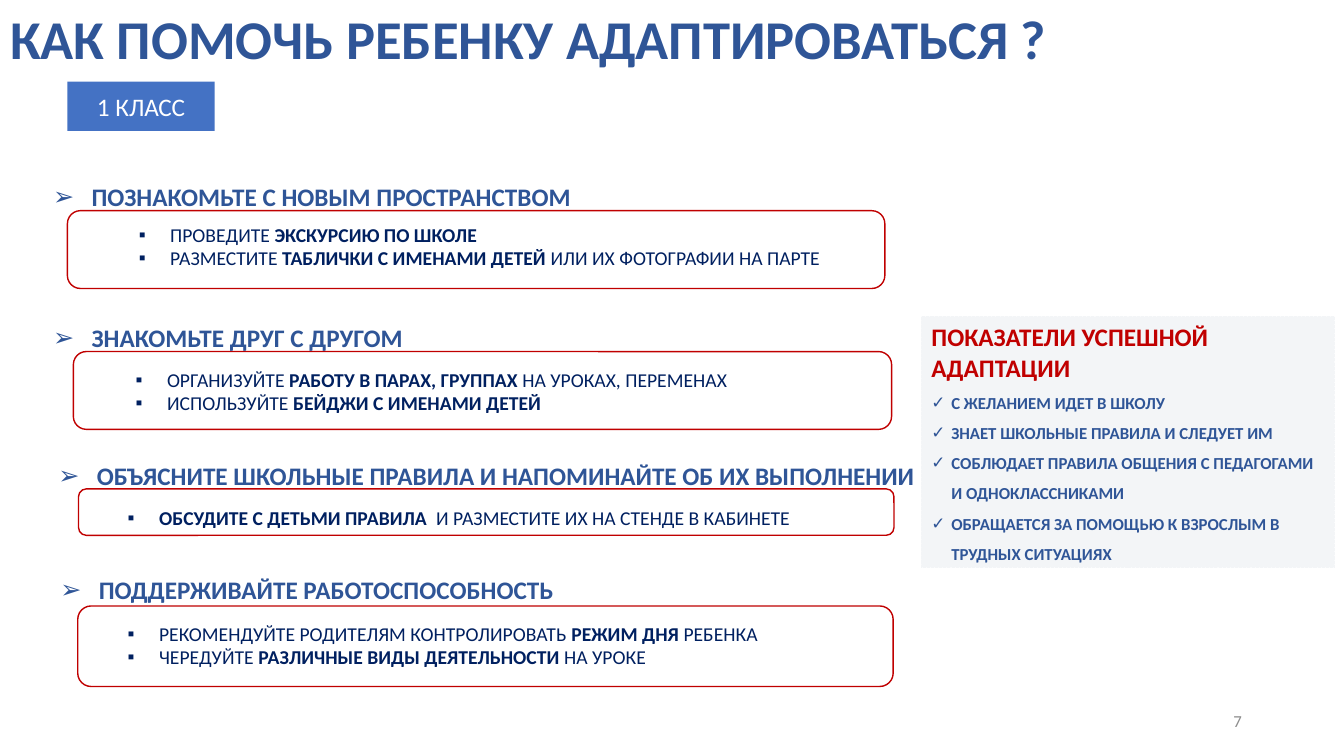
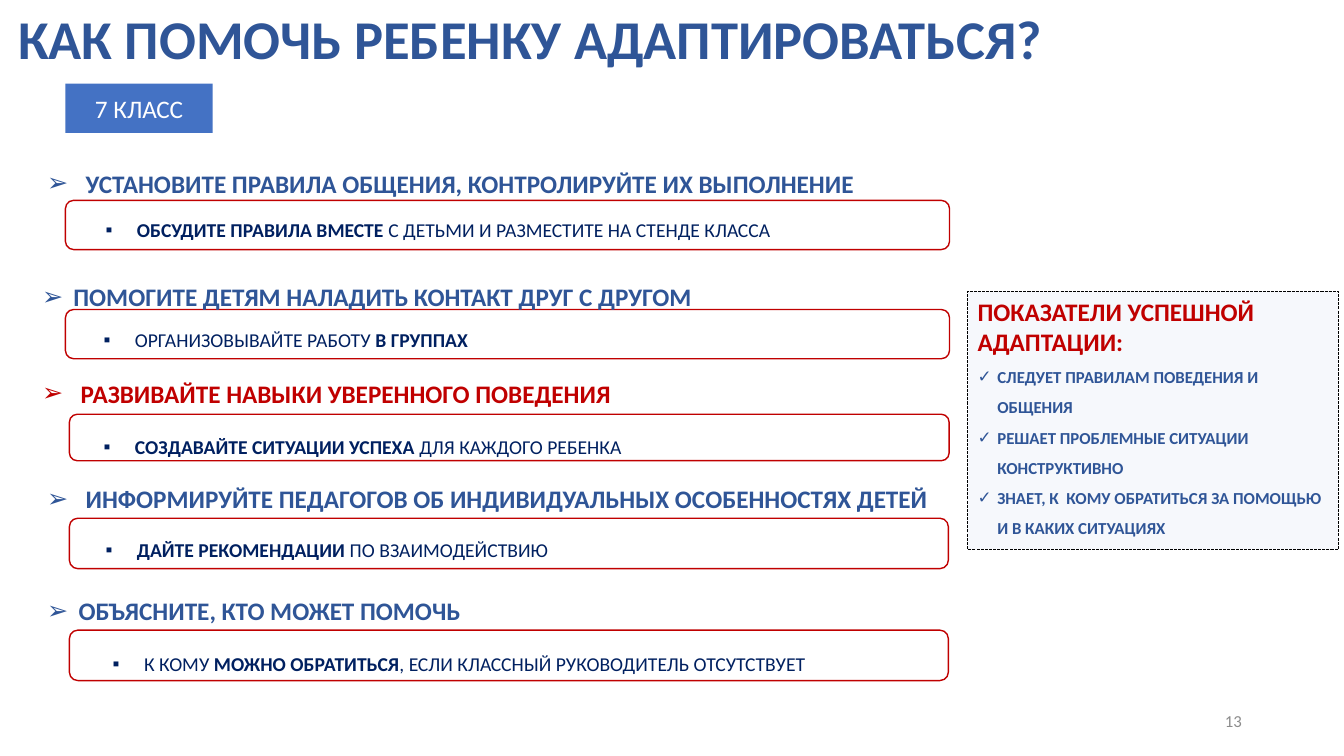
from dataclasses import dataclass

from lxml.etree import SubElement
from pptx import Presentation
from pptx.dml.color import RGBColor
from pptx.enum.dml import MSO_LINE_DASH_STYLE as Dash
from pptx.enum.shapes import MSO_AUTO_SHAPE_TYPE as Shape
from pptx.enum.text import MSO_ANCHOR as Anchor, MSO_AUTO_SIZE as AutoSize, PP_ALIGN as Align
from pptx.oxml.ns import qn
from pptx.util import Cm, Pt

BLUE, NAVY, RED, WHITE = "2F5597", "002060", "C00000", "FFFFFF"
TAG_BLUE, GREY, BLACK = "4472C4", "8C8C8C", "000000"

TEXT = {
    "title": {"size": Pt(39), "bold": True},
    "heading": {"size": Pt(18), "bold": True},
    "advice": {"size": Pt(14), "bold": False},
    "sign": {"size": Pt(12), "bold": True},
    "tag": {"size": Pt(18), "bold": False},
    "number": {"size": Pt(12), "bold": False},
}


def apply(target, values):
    for name, value in values.items():
        setattr(target, name, value)


def paint(color_format, color):
    color_format.rgb = RGBColor.from_string(color)


@dataclass
class Section:
    heading: str
    heading_at: tuple
    box: tuple
    advice_at: tuple
    advice: list
    color: str = BLUE
    hanging: float = 0.97


class Deck:
    """Holds the shared style and the slide being filled."""

    def __init__(self):
        self.presentation = Presentation()
        apply(self.presentation, {"slide_width": Cm(33.87), "slide_height": Cm(19.05)})
        self.slide = None

    def start(self):
        self.slide = self.presentation.slides.add_slide(self.presentation.slide_layouts[1])

    def place(self, part, area):
        apply(part, dict(zip(("left", "top", "width", "height"), map(Cm, area))))

    def surface(self, part, fill=None, line=None, width=1):
        if fill:
            part.fill.solid()
            paint(part.fill.fore_color, fill)
        else:
            part.fill.background()
        if line:
            paint(part.line.color, line)
            part.line.width = Pt(width)
        else:
            part.line.fill.background()

    def frame(self, part, anchor=Anchor.TOP):
        apply(part.text_frame, {"word_wrap": True, "auto_size": AutoSize.NONE,
                                "vertical_anchor": anchor})
        return part.text_frame

    def fill_text(self, paragraph, text, style, color, spacing=1.0, align=Align.LEFT):
        apply(paragraph, {"line_spacing": spacing, "space_before": Pt(0), "alignment": align})
        for index, words in enumerate(text.split("*")):
            if words:
                run = paragraph.add_run()
                run.text = words
                apply(run.font, {"name": "Calibri", **TEXT[style]})
                paint(run.font.color, color)
                if index % 2:
                    run.font.bold = True

    def bullet(self, paragraph, mark=None, indent=0, hanging=0):
        properties = paragraph._p.get_or_add_pPr()
        properties.set("marL", str(Cm(indent)))
        properties.set("indent", str(-Cm(hanging)))
        if mark:
            SubElement(properties, qn("a:buFont")).set("typeface", "Arial")
            SubElement(properties, qn("a:buChar")).set("char", mark)
        else:
            SubElement(properties, qn("a:buNone"))

    def shape(self, kind, area, **look):
        part = self.slide.shapes.add_shape(kind, *map(Cm, area))
        part.shadow.inherit = False
        self.surface(part, **look)
        return part

    def textbox(self, area, anchor=Anchor.TOP):
        return self.frame(self.slide.shapes.add_textbox(*map(Cm, area)), anchor)

    def title(self, text, left):
        title = self.slide.shapes.title
        self.place(title, (left, 0.23, 27.03, 1.63))
        self.surface(title, WHITE, WHITE)
        frame = self.frame(title, Anchor.MIDDLE)
        self.fill_text(frame.paragraphs[0], text, "title", BLUE, 0.9)

    def tag(self, text, left, top):
        tag = self.shape(Shape.RECTANGLE, (left, top, 3.71, 1.24), fill=TAG_BLUE)
        frame = self.frame(tag, Anchor.MIDDLE)
        self.fill_text(frame.paragraphs[0], text, "tag", WHITE, align=Align.CENTER)

    def bullets(self, frame, lines, mark, indent, hanging, style, color, spacing):
        for index, text in enumerate(lines):
            first = index == 0 and not frame.text
            paragraph = frame.paragraphs[0] if first else frame.add_paragraph()
            self.bullet(paragraph, mark, indent, hanging)
            self.fill_text(paragraph, text, style, color, spacing)

    def section(self, section):
        self.shape(Shape.ROUNDED_RECTANGLE, section.box, line=RED)
        heading = self.textbox((*section.heading_at, 23.04, 1.3))
        self.bullets(heading, [section.heading], "➢", section.hanging, section.hanging,
                     "heading", section.color, 1.5)
        advice = self.textbox((*section.advice_at, 20.5, 1.45))
        spacing = 1.5 if len(section.advice) == 1 else 1.0
        self.bullets(advice, section.advice, "▪", 2.26, 0.79, "advice", NAVY, spacing)

    def panel(self, heading, signs, area, fill, line):
        panel = self.slide.placeholders[1]
        self.place(panel, area)
        self.surface(panel, fill, line, 0.75)
        panel.line.dash_style = Dash.SQUARE_DOT
        frame = self.frame(panel)
        self.bullets(frame, [heading], None, 0, 0, "heading", RED, 1.0)
        self.bullets(frame, signs, "✓", 0.5, 0.5, "sign", BLUE, 1.5)

    def number(self, text):
        frame = self.textbox((23.93, 17.65, 7.62, 1.02), Anchor.MIDDLE)
        self.fill_text(frame.paragraphs[0], text, "number", GREY, align=Align.RIGHT)


SLIDES = [
    {
        "title": ("КАК ПОМОЧЬ РЕБЕНКУ АДАПТИРОВАТЬСЯ ?", 0),
        "tag": ("1 КЛАСС", 1.7, 2.06),
        "panel": (
            "ПОКАЗАТЕЛИ УСПЕШНОЙ АДАПТАЦИИ",
            ["С ЖЕЛАНИЕМ ИДЕТ В ШКОЛУ",
             "ЗНАЕТ ШКОЛЬНЫЕ ПРАВИЛА И СЛЕДУЕТ ИМ",
             "СОБЛЮДАЕТ ПРАВИЛА ОБЩЕНИЯ С ПЕДАГОГАМИ И ОДНОКЛАССНИКАМИ",
             "ОБРАЩАЕТСЯ ЗА ПОМОЩЬЮ К ВЗРОСЛЫМ В ТРУДНЫХ СИТУАЦИЯХ"],
            (23.22, 7.98, 10.41, 6.32), "F3F5F7", "F3F5F7"),
        "number": ("7",),
        "sections": [
            Section("ПОЗНАКОМЬТЕ С НОВЫМ ПРОСТРАНСТВОМ", (1.09, 4.06),
                    (1.7, 5.31, 20.6, 1.96), (1.78, 5.49),
                    ["ПРОВЕДИТЕ* ЭКСКУРСИЮ ПО ШКОЛЕ*",
                     "РАЗМЕСТИТЕ *ТАБЛИЧКИ С ИМЕНАМИ ДЕТЕЙ *ИЛИ ИХ ФОТОГРАФИИ НА ПАРТЕ"]),
            Section("ЗНАКОМЬТЕ ДРУГ С ДРУГОМ", (1.09, 7.62),
                    (1.85, 8.86, 20.62, 1.96), (1.7, 9.14),
                    ["ОРГАНИЗУЙТЕ *РАБОТУ В ПАРАХ, ГРУППАХ *НА УРОКАХ, ПЕРЕМЕНАХ",
                     "ИСПОЛЬЗУЙТЕ* БЕЙДЖИ С ИМЕНАМИ ДЕТЕЙ*"]),
            Section("ОБЪЯСНИТЕ ШКОЛЬНЫЕ ПРАВИЛА И НАПОМИНАЙТЕ ОБ ИХ ВЫПОЛНЕНИИ", (1.22, 11.1),
                    (1.98, 12.32, 20.55, 1.17), (1.5, 12.32),
                    ["*ОБСУДИТЕ С ДЕТЬМИ ПРАВИЛА  *И РАЗМЕСТИТЕ ИХ НА СТЕНДЕ В КАБИНЕТЕ"]),
            Section("ПОДДЕРЖИВАЙТЕ РАБОТОСПОСОБНОСТЬ", (1.27, 13.97),
                    (1.96, 15.27, 20.55, 2.03), (1.5, 15.54),
                    ["РЕКОМЕНДУЙТЕ РОДИТЕЛЯМ КОНТРОЛИРОВАТЬ *РЕЖИМ ДНЯ* РЕБЕНКА",
                     "ЧЕРЕДУЙТЕ *РАЗЛИЧНЫЕ ВИДЫ ДЕЯТЕЛЬНОСТИ *НА УРОКЕ"]),
        ],
    },
    {
        "title": ("КАК ПОМОЧЬ РЕБЕНКУ АДАПТИРОВАТЬСЯ?", 0.2),
        "tag": ("7 КЛАСС", 1.65, 2.11),
        "panel": (
            "ПОКАЗАТЕЛИ УСПЕШНОЙ АДАПТАЦИИ:",
            ["СЛЕДУЕТ ПРАВИЛАМ ПОВЕДЕНИЯ И ОБЩЕНИЯ",
             "РЕШАЕТ ПРОБЛЕМНЫЕ СИТУАЦИИ КОНСТРУКТИВНО",
             "ЗНАЕТ, К  КОМУ ОБРАТИТЬСЯ ЗА ПОМОЩЬЮ И В КАКИХ СИТУАЦИЯХ"],
            (24.38, 7.34, 9.35, 6.5), "F6F8FC", BLACK),
        "number": ("13",),
        "sections": [
            Section("УСТАНОВИТЕ ПРАВИЛА ОБЩЕНИЯ, КОНТРОЛИРУЙТЕ ИХ ВЫПОЛНЕНИЕ", (0.94, 3.73),
                    (1.65, 5.05, 22.28, 1.24), (0.94, 5.08),
                    ["*ОБСУДИТЕ ПРАВИЛА ВМЕСТЕ *С ДЕТЬМИ И РАЗМЕСТИТЕ НА СТЕНДЕ КЛАССА"]),
            Section("ПОМОГИТЕ ДЕТЯМ НАЛАДИТЬ КОНТАКТ ДРУГ С ДРУГОМ", (0.81, 6.58),
                    (1.65, 7.8, 22.28, 1.24), (0.89, 7.85),
                    ["ОРГАНИЗОВЫВАЙТЕ РАБОТУ *В ГРУППАХ*"], hanging=0.79),
            Section("РАЗВИВАЙТЕ НАВЫКИ УВЕРЕННОГО ПОВЕДЕНИЯ", (0.81, 9.02),
                    (1.75, 10.44, 22.17, 1.17), (0.89, 10.54),
                    ["*СОЗДАВАЙТЕ СИТУАЦИИ УСПЕХА *ДЛЯ КАЖДОГО РЕБЕНКА"], color=RED),
            Section("ИНФОРМИРУЙТЕ ПЕДАГОГОВ ОБ ИНДИВИДУАЛЬНЫХ ОСОБЕННОСТЯХ ДЕТЕЙ", (0.94, 11.68),
                    (1.75, 13.06, 22.15, 1.27), (0.94, 13.13),
                    ["*ДАЙТЕ РЕКОМЕНДАЦИИ *ПО ВЗАИМОДЕЙСТВИЮ"]),
            Section("ОБЪЯСНИТЕ, КТО МОЖЕТ ПОМОЧЬ", (0.94, 14.5),
                    (1.75, 15.88, 22.15, 1.27), (1.12, 16),
                    ["К КОМУ *МОЖНО ОБРАТИТЬСЯ*, ЕСЛИ КЛАССНЫЙ РУКОВОДИТЕЛЬ ОТСУТСТВУЕТ"],
                    hanging=0.79),
        ],
    },
]


def main():
    deck = Deck()
    for content in SLIDES:
        deck.start()
        deck.title(*content["title"])
        deck.tag(*content["tag"])
        deck.panel(*content["panel"])
        for section in content["sections"]:
            deck.section(section)
        deck.number(*content["number"])
    deck.presentation.save("out.pptx")


if __name__ == "__main__":
    main()
